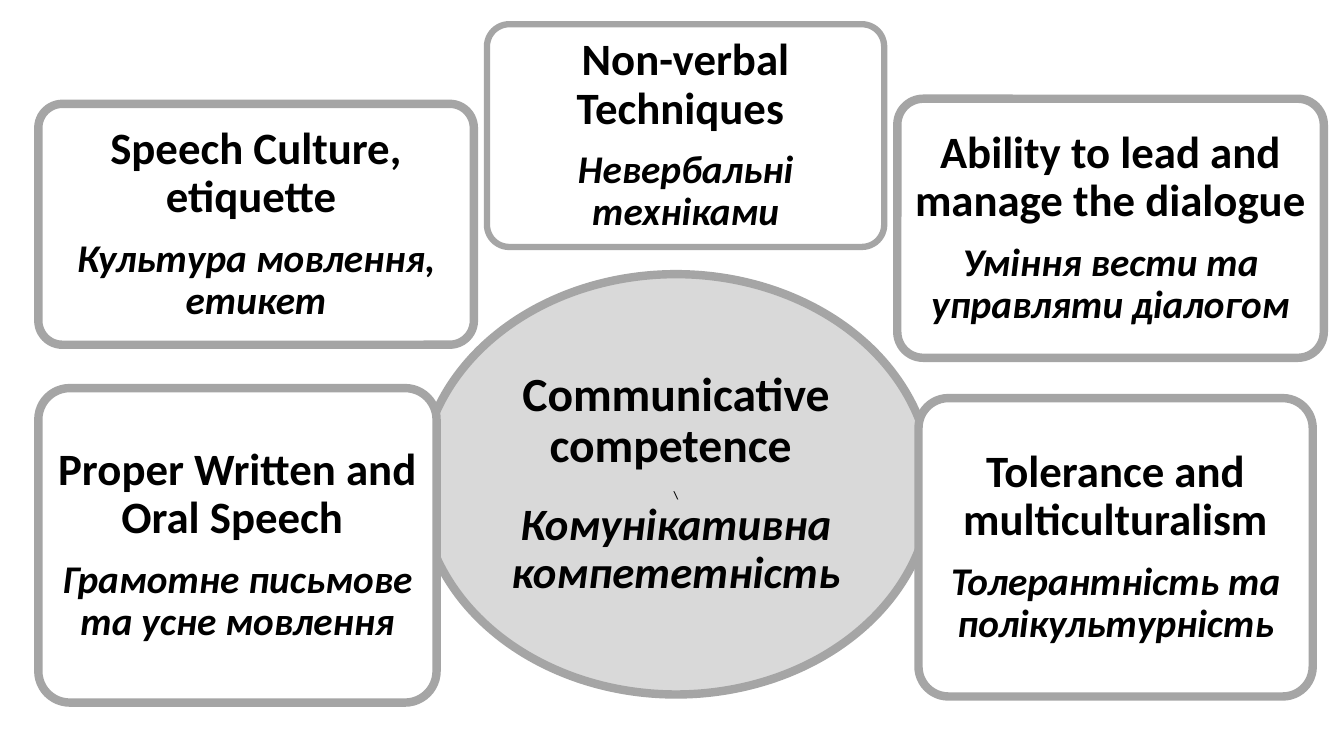
from copy import deepcopy
from dataclasses import dataclass

from lxml import etree
from pptx import Presentation
from pptx import util as u
from pptx.dml import color
from pptx.enum import shapes, text
from pptx.oxml import ns


@dataclass(frozen=True)
class Theme:
    font: str = "Calibri"
    text: str = "000000"
    border: str = "A5A5A5"
    box_fill: str = "FFFFFF"
    centre_fill: str = "D9D9D9"
    box_english: int = 32
    box_ukrainian: int = 28
    centre_english: int = 34
    centre_ukrainian: int = 32
    mark: int = 8


THEME = Theme()


@dataclass(frozen=True)
class Bubble:
    left: float
    top: float
    width: float
    height: float
    english: str
    ukrainian: str
    border: float = 6
    fill: str = THEME.box_fill
    english_size: int = THEME.box_english
    ukrainian_size: int = THEME.box_ukrainian
    inset: float = 0.07
    mark: str = ""
    kind: shapes.MSO_SHAPE = shapes.MSO_SHAPE.ROUNDED_RECTANGLE


CENTRE = Bubble(
    4.17, 2.72, 5.07, 4.17, "Communicative competence ", "Комунікативна компететність",
    fill=THEME.centre_fill, english_size=THEME.centre_english,
    ukrainian_size=THEME.centre_ukrainian, inset=0.02, mark="\\",
    kind=shapes.MSO_SHAPE.OVAL,
)
SKILLS = [
    Bubble(0.38, 3.85, 3.95, 3.12, "Proper Written and Oral Speech ",
           "Грамотне письмове та усне мовлення"),
    Bubble(0.38, 1.03, 4.32, 2.39, "Speech Culture, etiquette ", "Культура мовлення, етикет"),
    Bubble(4.83, 0.24, 3.94, 2.21, "Non-verbal Techniques ", "Невербальні техніками",
           border=4.5),
    Bubble(8.9, 0.98, 4.23, 2.57, "Ability to lead and manage the dialogue",
           "Уміння вести та управляти діалогом"),
    Bubble(9.11, 3.95, 3.91, 2.96, "Tolerance and multiculturalism",
           "Толерантність та полікультурність"),
]


def format_paragraph(paragraph) -> None:
    """Centre the paragraph and leave 35% of its line height after it."""
    paragraph.alignment = text.PP_ALIGN.CENTER
    paragraph.line_spacing = 0.9
    paragraph.space_before = u.Pt(0)
    space_after = etree.SubElement(paragraph._p.get_or_add_pPr(), ns.qn("a:spcAft"))
    etree.SubElement(space_after, ns.qn("a:spcPct"), val="35000")


def add_run(paragraph, words: str, size: int, italic: bool = False):
    run = paragraph.add_run()
    run.text = words
    run.font.name = THEME.font
    run.font.size = u.Pt(size)
    run.font.bold = True
    run.font.italic = italic
    run.font.color.rgb = color.RGBColor.from_string(THEME.text)
    return run


def add_mark_line(paragraph, mark: str) -> None:
    """Add the small mark and a line break of the same size."""
    run = add_run(paragraph, mark, THEME.mark)
    paragraph.add_line_break()
    paragraph._p.findall(ns.qn("a:br"))[-1].append(deepcopy(run.font._rPr))


def add_bubble(slide, bubble: Bubble) -> None:
    shape = slide.shapes.add_shape(
        bubble.kind, u.Inches(bubble.left), u.Inches(bubble.top),
        u.Inches(bubble.width), u.Inches(bubble.height))
    if bubble.kind == shapes.MSO_SHAPE.ROUNDED_RECTANGLE:
        shape.adjustments[0] = 0.1
    shape.shadow.inherit = False
    shape.fill.solid()
    shape.fill.fore_color.rgb = color.RGBColor.from_string(bubble.fill)
    shape.line.color.rgb = color.RGBColor.from_string(THEME.border)
    shape.line.width = u.Pt(bubble.border)

    frame = shape.text_frame
    frame.word_wrap = True
    frame.vertical_anchor = text.MSO_ANCHOR.MIDDLE
    frame.margin_left = frame.margin_right = u.Inches(bubble.inset)
    frame.margin_top = frame.margin_bottom = u.Inches(bubble.inset)

    english, ukrainian = frame.paragraphs[0], frame.add_paragraph()
    format_paragraph(english)
    format_paragraph(ukrainian)
    add_run(english, bubble.english, bubble.english_size)
    if bubble.mark:
        add_mark_line(ukrainian, bubble.mark)
    add_run(ukrainian, bubble.ukrainian, bubble.ukrainian_size, italic=True)


def main() -> None:
    presentation = Presentation()
    presentation.slide_width = u.Inches(13.33)
    presentation.slide_height = u.Inches(7.5)
    slide = presentation.slides.add_slide(presentation.slide_layouts[6])
    for bubble in [CENTRE, *SKILLS]:
        add_bubble(slide, bubble)
    presentation.save("out.pptx")


if __name__ == "__main__":
    main()
